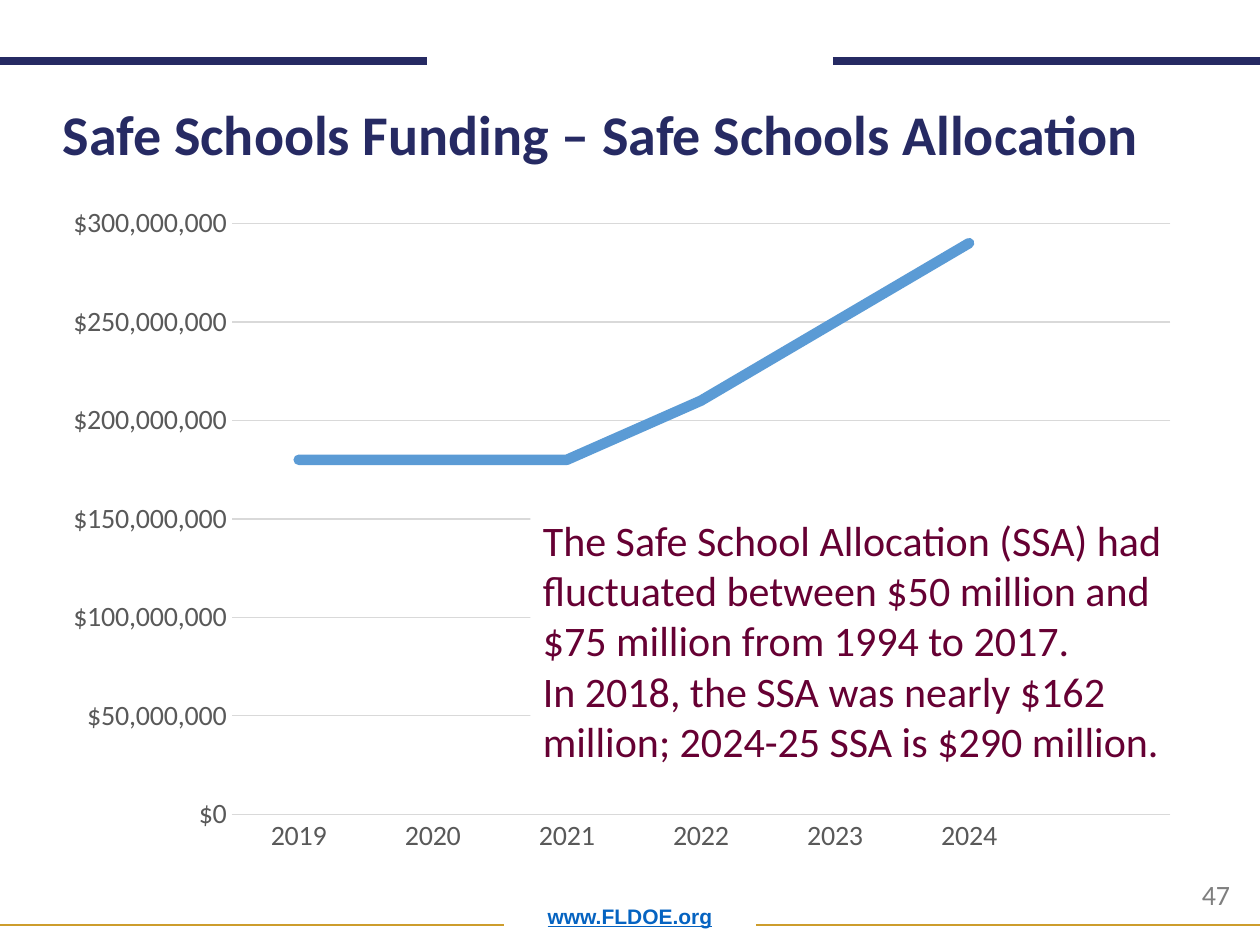
from lxml import etree
from pptx import Presentation
from pptx.chart.data import CategoryChartData
from pptx.dml.color import RGBColor
from pptx.enum.chart import XL_CHART_TYPE, XL_MARKER_STYLE, XL_TICK_MARK
from pptx.enum.shapes import MSO_CONNECTOR, MSO_SHAPE
from pptx.enum.text import MSO_ANCHOR, PP_ALIGN
from pptx.oxml.ns import qn
from pptx.util import Pt

LINE_CHART = XL_CHART_TYPE.LINE
NO_MARKER = XL_MARKER_STYLE.NONE
NO_TICK = XL_TICK_MARK.NONE
STRAIGHT = MSO_CONNECTOR.STRAIGHT
RECTANGLE = MSO_SHAPE.RECTANGLE
TOP, BOTTOM = MSO_ANCHOR.TOP, MSO_ANCHOR.BOTTOM
LEFT, CENTER = PP_ALIGN.LEFT, PP_ALIGN.CENTER

# Content
TITLE = "Safe Schools Funding – Safe Schools Allocation"
NOTE = [
    "The Safe School Allocation (SSA) had fluctuated between $50 million "
    "and $75 million from 1994 to 2017. ",
    "In 2018, the SSA was nearly $162 million; 2024-25 SSA is $290 million.",
]
WEBSITE = "www.FLDOE.org"
PAGE_NUMBER = "47"
MILLION = 1_000_000
# The last, empty category leaves room at the right of the line
ALLOCATIONS = [("2019", 180), ("2020", 180), ("2021", 180), ("2022", 210),
               ("2023", 250), ("2024", 290), ("", None)]
AXIS_MAX, AXIS_STEP = 300 * MILLION, 50 * MILLION

THEME = {
    "navy": "262A63", "gold": "CD9D2C", "link": "0563C1", "gray": "7F7F7F",
    "maroon": "660033", "axis": "595959", "grid": "D9D9D9",
    "series": "5B9BD5", "white": "FFFFFF",
    "font": "Calibri", "link_font": "Arial",
    "title_size": 32, "note_size": 24, "label_size": 16, "link_size": 12,
}

# Layout in points
SLIDE_W, SLIDE_H = 720, 540
RULES = [  # y, length at each edge, colour, weight
    (34.8, 244, "navy", 5),
    (528.5, 288, "gold", 1),
]
TITLE_BOX = (28.8, 58.3, 638.6, 41)
CHART_BOX = (28.8, 110.2, 653, 385.2)
NOTE_BOX = (303.1, 290.2, 367.9, 152.6)
WEBSITE_BOX = (49.7, 504, 620.6, 30.2)
PAGE_BOX = (679.7, 498.2, 37.4, 26.6)


def color(name):
    return RGBColor.from_string(THEME[name])


def points(box):
    return [Pt(value) for value in box]


def style_line(line, name, weight):
    line.color.rgb = color(name)
    line.width = Pt(weight)


def style_font(font, name, size, face="font", bold=False):
    font.name = THEME[face]
    font.size = Pt(THEME[size])
    font.color.rgb = color(name)
    font.bold = bold


def write(holder, lines, name, size, face="font", bold=False, underline=False,
          align=LEFT, anchor=TOP, spacing=None):
    frame = holder.text_frame
    frame.word_wrap = True
    frame.vertical_anchor = anchor
    paragraph = frame.paragraphs[0]
    paragraph.alignment = align
    if spacing:
        paragraph.line_spacing = spacing
    for index, line in enumerate(lines):
        if index:
            paragraph.add_line_break()
        run = paragraph.add_run()
        run.text = line
        style_font(run.font, name, size, face, bold)
        if underline:
            run.font.underline = True


def add_rule(slide, start, end, y, name, weight):
    rule = slide.shapes.add_connector(STRAIGHT, Pt(start), Pt(y), Pt(end), Pt(y))
    style_line(rule.line, name, weight)
    etree.SubElement(rule._element.spPr, qn("a:effectLst"))


def add_allocation_chart(slide):
    data = CategoryChartData(number_format='"$"#,##0')
    data.categories = [year for year, _ in ALLOCATIONS]
    data.add_series("Series 1", [amount and amount * MILLION
                                 for _, amount in ALLOCATIONS])
    chart = slide.shapes.add_chart(LINE_CHART, *points(CHART_BOX), data).chart
    chart.has_legend = False
    chart.has_title = False
    style_font(chart.font, "axis", "label_size")

    plot = chart.plots[0]
    plot.vary_by_categories = False
    allocation = plot.series[0]
    allocation.smooth = False
    allocation.marker.style = NO_MARKER
    style_line(allocation.format.line, "series", 6)
    allocation.format.line._get_or_add_ln().set("cap", "rnd")

    years, dollars = chart.category_axis, chart.value_axis
    for axis in (years, dollars):
        axis.major_tick_mark = axis.minor_tick_mark = NO_TICK
        style_font(axis.tick_labels.font, "axis", "label_size")
    style_line(years.format.line, "grid", 0.75)
    dollars.format.line.fill.background()
    dollars.minimum_scale, dollars.maximum_scale = 0, AXIS_MAX
    dollars.major_unit = AXIS_STEP
    dollars.has_major_gridlines = True
    style_line(dollars.major_gridlines.format.line, "grid", 0.75)
    dollars.tick_labels.number_format = '"$"#,##0'
    dollars.tick_labels.number_format_is_linked = False


def main():
    deck = Presentation()
    deck.slide_width, deck.slide_height = Pt(SLIDE_W), Pt(SLIDE_H)
    slide = deck.slides.add_slide(deck.slide_layouts[6])
    shapes = slide.shapes

    # Rules at the top and bottom, mirrored left and right
    for y, length, name, weight in RULES:
        add_rule(slide, 0, length, y, name, weight)
        add_rule(slide, SLIDE_W - length, SLIDE_W, y, name, weight)

    # Footer
    write(shapes.add_textbox(*points(WEBSITE_BOX)), [WEBSITE], "link",
          "link_size", "link_font", bold=True, underline=True,
          align=CENTER, anchor=BOTTOM, spacing=0.9)
    write(shapes.add_textbox(*points(PAGE_BOX)), [PAGE_NUMBER], "gray",
          "label_size")

    # Title
    write(shapes.add_textbox(*points(TITLE_BOX)), [TITLE], "navy",
          "title_size", bold=True, anchor=BOTTOM, spacing=0.9)

    # Chart, with the note over its lower right part
    add_allocation_chart(slide)
    note = shapes.add_shape(RECTANGLE, *points(NOTE_BOX))
    note.shadow.inherit = False
    note.fill.solid()
    note.fill.fore_color.rgb = color("white")
    note.line.fill.background()
    write(note, NOTE, "maroon", "note_size")

    deck.save("out.pptx")


if __name__ == "__main__":
    main()
